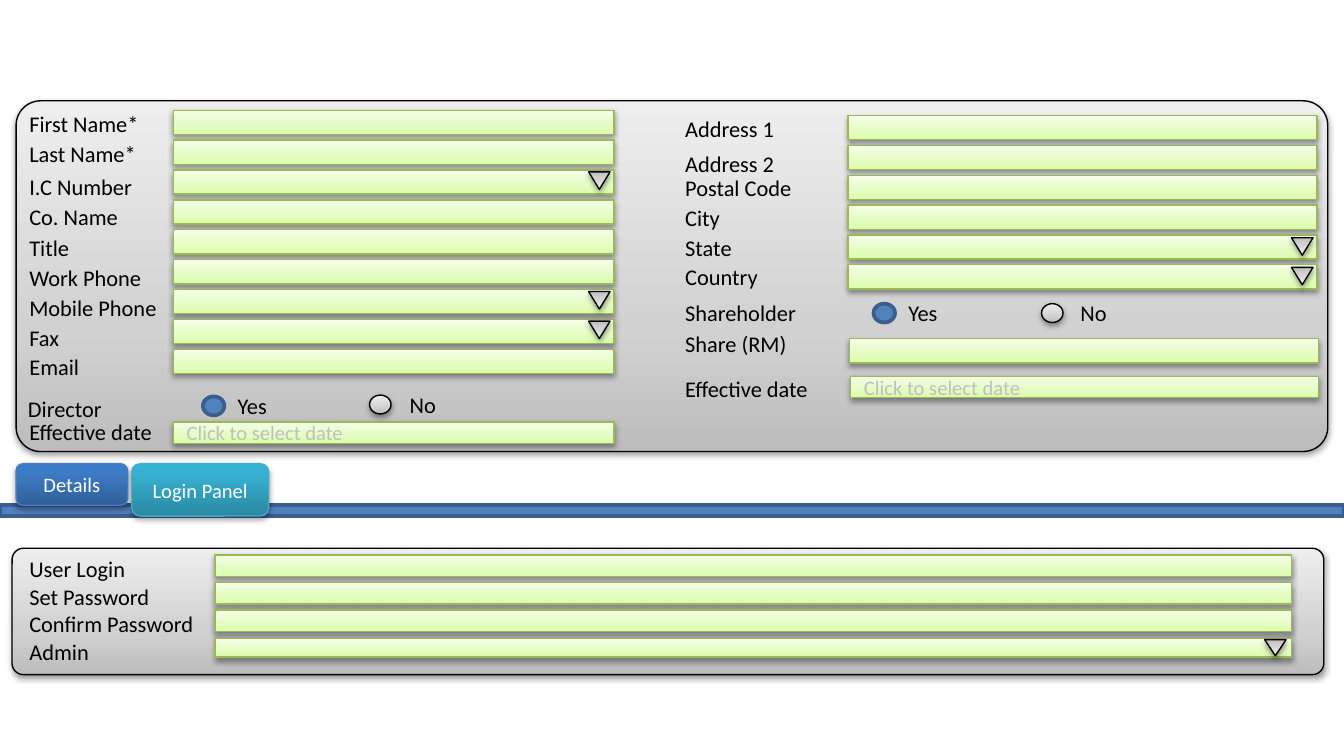
"""Build a member form slide with a details panel, two tabs and a login panel."""
from lxml import etree
from pptx import Presentation
from pptx import util as u
from pptx.dml.color import RGBColor
from pptx.enum import shapes, text
from pptx.oxml import ns

BLACK = RGBColor(0x00, 0x00, 0x00)
WHITE = RGBColor(0xFF, 0xFF, 0xFF)
HINT = RGBColor(0xBF, 0xBF, 0xBF)
BLUE = RGBColor(0x4F, 0x81, 0xBD)
BLUE_EDGE = RGBColor(0x3A, 0x5F, 0x8C)
GREEN_EDGE = RGBColor(0x98, 0xB9, 0x55)
TAB_EDGE = RGBColor(0x4B, 0x7E, 0xBC)
TEAL_EDGE = RGBColor(0x46, 0xAA, 0xC5)
GREY_STOPS = [(0, RGBColor(0xBD, 0xBD, 0xBD)), (35, RGBColor(0xD1, 0xD1, 0xD1)), (100, RGBColor(0xEE, 0xEE, 0xEE))]
GREEN_STOPS = [(0, RGBColor(0xDA, 0xFD, 0xA7)), (35, RGBColor(0xE4, 0xFC, 0xC2)), (100, RGBColor(0xF5, 0xFF, 0xE7))]
TAB_STOPS = [(0, RGBColor(0x2F, 0x5F, 0x99)), (80, RGBColor(0x3D, 0x7C, 0xC7)), (100, RGBColor(0x3A, 0x7C, 0xCB))]
TEAL_STOPS = [(0, RGBColor(0x2A, 0x88, 0xA2)), (80, RGBColor(0x37, 0xB1, 0xD2)), (100, RGBColor(0x34, 0xB4, 0xD6))]

KIND = shapes.MSO_SHAPE
GREY = {"stops": GREY_STOPS, "edge": BLACK, "shade": (38, 1.6)}
GREEN = {"stops": GREEN_STOPS, "edge": GREEN_EDGE, "shade": (38, 1.6)}
TAB = {"stops": TAB_STOPS, "edge": TAB_EDGE, "shade": (35, 1.8)}
TEAL = {"stops": TEAL_STOPS, "edge": TEAL_EDGE, "shade": (35, 1.8)}
SOLID = {"stops": None, "edge": BLUE_EDGE, "shade": None}

LEFT, MIDDLE = 0.12, 5
FIELD_LEFT, FIELD_RIGHT, FIELD_LOGIN = 1.29, 6.31, 1.6
FIELD_HEIGHT, LABEL_HEIGHT = 0.18, 0.3


def add_part(canvas, kind, box, style):
    shape = canvas.add_shape(kind, *[u.Inches(length) for length in box])
    shape.shadow.inherit = False
    shape.line.color.rgb = style["edge"]
    if style["stops"] is None:
        shape.fill.solid()
        shape.fill.fore_color.rgb = BLUE
        shape.line.width = u.Pt(2)
        return shape
    shape.line.width = u.Pt(0.75)
    shape.fill.gradient()
    shape.fill.gradient_angle = 90
    properties = shape._element.spPr
    stop_list = properties.find(ns.qn("a:gradFill")).find(ns.qn("a:gsLst"))
    for stop in list(stop_list):
        stop_list.remove(stop)
    for position, color in style["stops"]:
        stop = etree.SubElement(stop_list, ns.qn("a:gs"), pos=str(position * 1000))
        etree.SubElement(stop, ns.qn("a:srgbClr"), val=str(color))
    opacity, distance = style["shade"]
    shadow = etree.SubElement(properties.find(ns.qn("a:effectLst")), ns.qn("a:outerShdw"),
                              blurRad=str(u.Pt(3.1)), dist=str(u.Pt(distance)), dir="5400000", rotWithShape="0")
    shade = etree.SubElement(shadow, ns.qn("a:srgbClr"), val=str(BLACK))
    etree.SubElement(shade, ns.qn("a:alpha"), val=str(opacity * 1000))
    return shape


def write(shape, words, size, color, align, frame_format):
    for name, value in frame_format.items():
        setattr(shape.text_frame, name, value)
    paragraph = shape.text_frame.paragraphs[0]
    paragraph.alignment = align
    run = paragraph.add_run()
    for name, value in {"name": "Calibri", "size": u.Pt(size)}.items():
        setattr(run.font, name, value)
    run.text = words
    run.font.color.rgb = color


presentation = Presentation()
presentation.slide_width = u.Inches(10)
presentation.slide_height = u.Inches(10) * 9 // 16
slide = presentation.slides.add_slide(presentation.slide_layouts[6])

add_part(slide.shapes, KIND.FLOWCHART_PROCESS, (0, 3.76, 10, 0.08), SOLID)
for words, box, style in [("Details", (0.12, 3.45, 0.83, 0.31), TAB),
                          ("Login Panel", (0.98, 3.45, 1.02, 0.39), TEAL)]:
    tab = add_part(slide.shapes, KIND.ROUNDED_RECTANGLE, box, style)
    write(tab, words, 11, WHITE, text.PP_ALIGN.CENTER,
          {"vertical_anchor": text.MSO_ANCHOR.MIDDLE, "word_wrap": True})

login = slide.shapes.add_group_shape().shapes
details = slide.shapes.add_group_shape().shapes
for canvas, box, corner in [(login, (0.09, 4.08, 9.76, 0.94), 0.09),
                            (details, (LEFT, 0.75, 9.76, 2.61), 0.07)]:
    panel = add_part(canvas, KIND.ROUNDED_RECTANGLE, box, GREY)
    panel.adjustments[0] = corner

columns = [
    (login, FIELD_LOGIN, 8.01, 0.16, 4.13, 4.54, 3),
    (login, FIELD_LOGIN, 8.01, 0.14, 4.75, 4.75, 1),
    (details, FIELD_LEFT, 3.28, FIELD_HEIGHT, 0.82, 2.6, 9),
    (details, FIELD_RIGHT, 3.49, FIELD_HEIGHT, 0.86, 1.97, 6),
    (details, 6.32, 3.49, FIELD_HEIGHT, 2.52, 2.52, 1),
]
for canvas, left, width, height, first, last, count in columns:
    pitch = (last - first) / max(count - 1, 1)
    for row in range(count):
        add_part(canvas, KIND.RECTANGLE, (left, first + row * pitch, width, height), GREEN)

for left, top, width in [(6.33, 2.8, 3.48), (FIELD_LEFT, 3.14, 3.28)]:
    date_field = add_part(details, KIND.RECTANGLE, (left, top, width, 0.16), GREEN)
    write(date_field, "Click to select date", 11, HINT, text.PP_ALIGN.LEFT,
          {"vertical_anchor": text.MSO_ANCHOR.MIDDLE, "word_wrap": True})

for canvas, left, top, height in [(slide.shapes, 9.41, 4.76, 0.12), (details, 4.38, 1.28, 0.13),
                                  (details, 4.38, 2.17, 0.13), (details, 4.38, 2.39, 0.13),
                                  (details, 9.61, 1.77, 0.13), (details, 9.61, 1.99, 0.13)]:
    arrow = add_part(canvas, KIND.ISOSCELES_TRIANGLE, (left, top, 0.16, height), GREY)
    arrow._element.spPr.find(ns.qn("a:xfrm")).set("flipV", "1")

for left, top, style in [(1.51, 2.95, SOLID), (2.75, 2.94, GREY), (6.5, 2.26, SOLID), (7.75, 2.26, GREY)]:
    add_part(details, KIND.OVAL, (left, top, 0.16, 0.14), style)

labels = [
    (login, LEFT, [("User Login", 4.08, 0.92), ("Set Password", 4.29, 1.11),
                   ("Confirm Password", 4.49, 1.44), ("Admin", 4.7, 0.65)]),
    (details, LEFT, [("First Name*", 0.77, 1.02), ("Last Name*", 0.99, 1), ("I.C Number", 1.24, 0.97),
                     ("Co. Name", 1.46, 0.87), ("Title", 1.69, 0.5), ("Work Phone", 1.92, 1.04),
                     ("Mobile Phone", 2.14, 1.16), ("Fax", 2.36, 0.43), ("Email", 2.58, 0.58)]),
    (details, 0.11, [("Director", 2.89, 0.8)]),
    (slide.shapes, LEFT, [("Effective date", 3.06, 1.13)]),
    (details, MIDDLE, [("Address 1", 0.81, 0.87), ("Address 2", 1.07, 0.87), ("Postal Code", 1.25, 1),
                       ("City", 1.47, 0.46), ("State", 1.69, 0.55), ("Country", 1.91, 0.74),
                       ("Shareholder", 2.18, 1.03), ("Share (RM)", 2.41, 0.96), ("Effective date", 2.74, 1.13)]),
    (details, 1.67, [("Yes", 2.87, 0.42)]),
    (details, 2.95, [("No", 2.86, 0.4)]),
    (details, 6.66, [("Yes", 2.18, 0.42)]),
    (details, 7.94, [("No", 2.18, 0.4)]),
]
for canvas, left, rows in labels:
    for words, top, width in rows:
        label = canvas.add_textbox(*[u.Inches(length) for length in (left, top, width, LABEL_HEIGHT)])
        write(label, words, 12, BLACK, text.PP_ALIGN.LEFT,
              {"word_wrap": False, "auto_size": text.MSO_AUTO_SIZE.SHAPE_TO_FIT_TEXT})

presentation.save("out.pptx")
